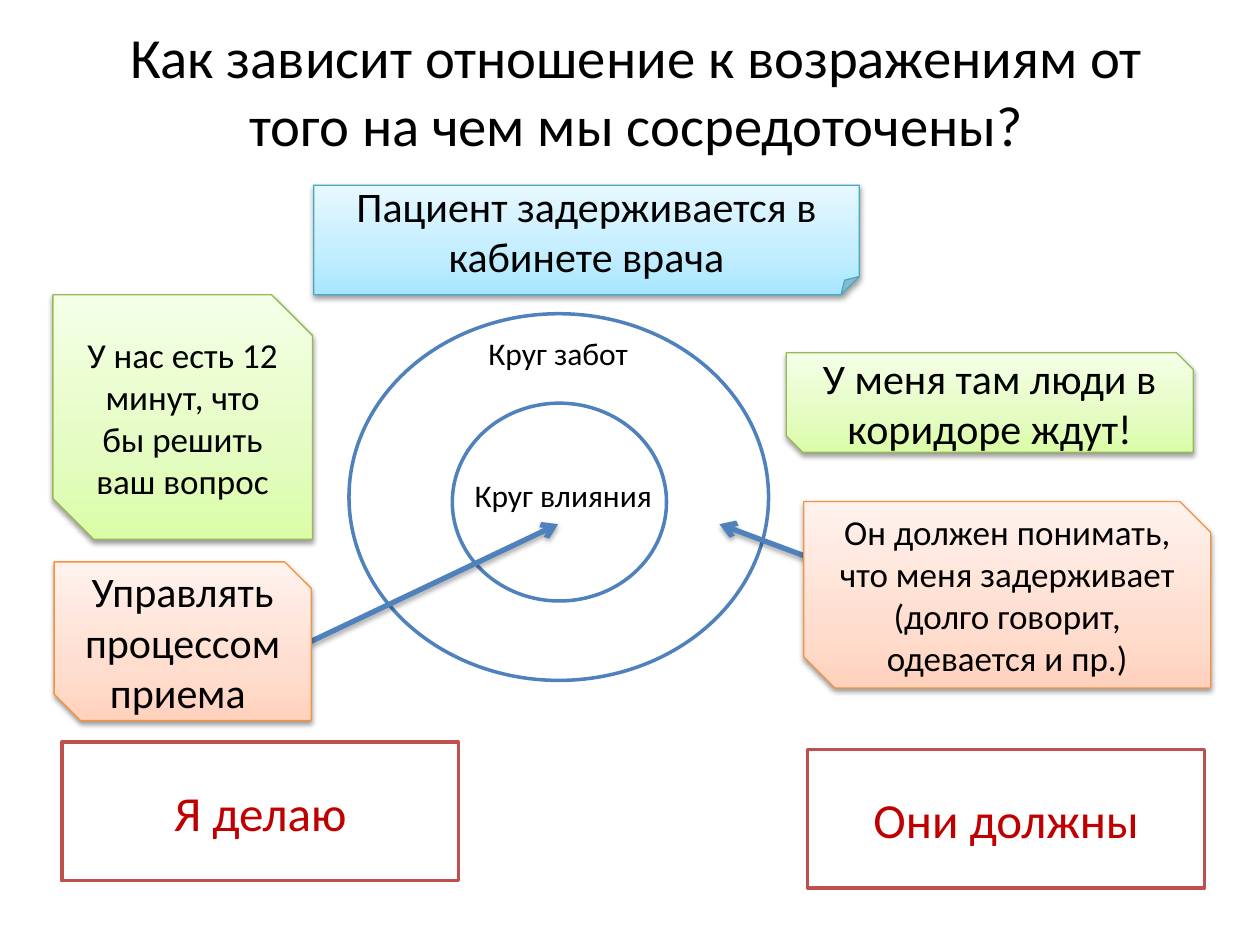
from dataclasses import dataclass

from lxml import etree
from pptx import Presentation
from pptx import util as u
from pptx.dml.color import RGBColor
from pptx.enum import shapes, text
from pptx.oxml import ns

COLUMNS, ROWS = 100, 75
BLACK, WHITE, RED, BLUE = "000000", "FFFFFF", "C00000", "4F81BD"
FONT = "Calibri"

deck = Presentation()
deck.slide_width, deck.slide_height = u.Inches(10), u.Inches(7.5)
page = deck.slides.add_slide(deck.slide_layouts[6])


@dataclass(frozen=True)
class Area:
    """A place on the grid, in columns and rows."""
    column: float
    row: float
    width: float
    height: float

    def lengths(self) -> tuple:
        return (across(self.column), down(self.row),
                across(self.width), down(self.height))


@dataclass(frozen=True)
class Theme:
    line: str
    stops: tuple


@dataclass(frozen=True)
class Note:
    area: Area
    words: str
    size: float
    theme: Theme
    kind: shapes.MSO_SHAPE = shapes.MSO_SHAPE.SNIP_2_DIAG_RECTANGLE


@dataclass(frozen=True)
class Arrow:
    start: tuple
    end: tuple


def across(columns: float) -> int:
    return round(deck.slide_width * columns / COLUMNS)


def down(rows: float) -> int:
    return round(deck.slide_height * rows / ROWS)


def colour(code: str) -> RGBColor:
    return RGBColor.from_string(code)


def add_node(parent, tag: str, **attributes):
    node = etree.SubElement(parent, ns.qn(tag))
    for name, value in attributes.items():
        node.set(name, str(value))
    return node


def add_shadow(effects, opacity: int, distance: float) -> None:
    shadow = add_node(effects, "a:outerShdw", blurRad=u.Pt(3.1), dist=u.Pt(distance),
                      dir=5400000, rotWithShape=0)
    tint = add_node(shadow, "a:srgbClr", val=BLACK)
    add_node(tint, "a:alpha", val=opacity * 1000)


def write(box, words: str, size: float, code: str = BLACK, margin: float = 0.1) -> None:
    frame = box.text_frame
    frame.word_wrap = True
    frame.vertical_anchor = text.MSO_ANCHOR.MIDDLE
    frame.margin_left = frame.margin_right = u.Inches(margin)
    para = frame.paragraphs[0]
    para.alignment = text.PP_ALIGN.CENTER
    span = para.add_run()
    span.text = words
    span.font.name, span.font.size = FONT, u.Pt(size)
    span.font.color.rgb = colour(code)


def add_label(area: Area, words: str, size: float, margin: float = 0.1) -> None:
    write(page.shapes.add_textbox(*area.lengths()), words, size, margin=margin)


def add_outline(kind: shapes.MSO_SHAPE, area: Area, line: str, width: float = 2):
    shape = page.shapes.add_shape(kind, *area.lengths())
    shape.shadow.inherit = False
    shape.fill.solid()
    shape.fill.fore_color.rgb = colour(WHITE)
    shape.line.color.rgb = colour(line)
    shape.line.width = u.Pt(width)
    return shape


def add_note(note: Note) -> None:
    shape = add_outline(note.kind, note.area, note.theme.line, 0.75)
    shape.fill.gradient()
    shape.fill.gradient_angle = 90
    properties = shape.element.spPr
    stops = properties.find(".//" + ns.qn("a:gsLst"))
    for stop in list(stops):
        stops.remove(stop)
    for position, code in zip((0, 35, 100), note.theme.stops):
        add_node(add_node(stops, "a:gs", pos=position * 1000), "a:srgbClr", val=code)
    add_shadow(properties.find(ns.qn("a:effectLst")), 38, 1.6)
    write(shape, note.words, note.size)


def add_arrow(arrow: Arrow) -> None:
    (x1, y1), (x2, y2) = arrow.start, arrow.end
    line = page.shapes.add_connector(shapes.MSO_CONNECTOR.STRAIGHT,
                                     across(x1), down(y1), across(x2), down(y2))
    line.line.color.rgb = colour(BLUE)
    line.line.width = u.Pt(3)
    properties = line.element.spPr
    add_node(properties.find(ns.qn("a:ln")), "a:tailEnd", type="arrow")
    add_shadow(add_node(properties, "a:effectLst"), 35, 1.8)


SKY = Theme("46AAC5", ("A7E6FF", "C1EDFF", "E7F8FF"))
GREEN = Theme("98B955", ("DAFDA7", "E4FCC2", "F5FFE7"))
ORANGE = Theme("F69240", ("FFD2BD", "FFDED0", "FFF2ED"))

CIRCLES = (Area(27.7, 24.9, 33.3, 29.1), Area(35.9, 32, 17, 15.7))
CIRCLE_LABELS = ((Area(35.8, 25.7, 17, 4.7), "Круг забот"),
                 (Area(36.2, 36.9, 17, 4.7), "Круг влияния"))
ARROWS = (Arrow((69.7, 46.3), (57.1, 41.6)), Arrow((24.7, 50.9), (44.3, 41.6)))
NOTES = (
    Note(Area(24.9, 14.7, 43.3, 8.7), "Пациент задерживается в кабинете врача", 24, SKY,
         shapes.MSO_SHAPE.FOLDED_CORNER),
    Note(Area(62.4, 28, 32.3, 7.9), "У меня там люди в коридоре ждут!", 24, GREEN),
    Note(Area(63.8, 39.8, 32.3, 14.8),
         "Он должен понимать, что меня задерживает (долго говорит, одевается и пр.)",
         20, ORANGE),
    Note(Area(4.2, 23.4, 20.6, 19.4), "У нас есть 12 минут, что бы решить ваш вопрос",
         20, GREEN),
    Note(Area(4.3, 44.6, 20.4, 12.6), "Управлять процессом приема ", 24, ORANGE),
)
VERDICTS = ((Area(64.1, 59.5, 31.5, 11), "Они должны"),
            (Area(4.9, 58.9, 31.5, 11), "Я делаю"))

add_label(Area(5.5, 2.1, 90, 10.1),
          "Как зависит отношение к возражениям от того на чем мы сосредоточены?",
          32.4, margin=0.2)
for circle in CIRCLES:
    add_outline(shapes.MSO_SHAPE.OVAL, circle, BLUE)
for place, name in CIRCLE_LABELS:
    add_label(place, name, 18)
for pointer in ARROWS:
    add_arrow(pointer)
for card in NOTES:
    add_note(card)
for place, verdict in VERDICTS:
    write(add_outline(shapes.MSO_SHAPE.RECTANGLE, place, "C0504D"), verdict, 28, RED)

deck.save("out.pptx")
